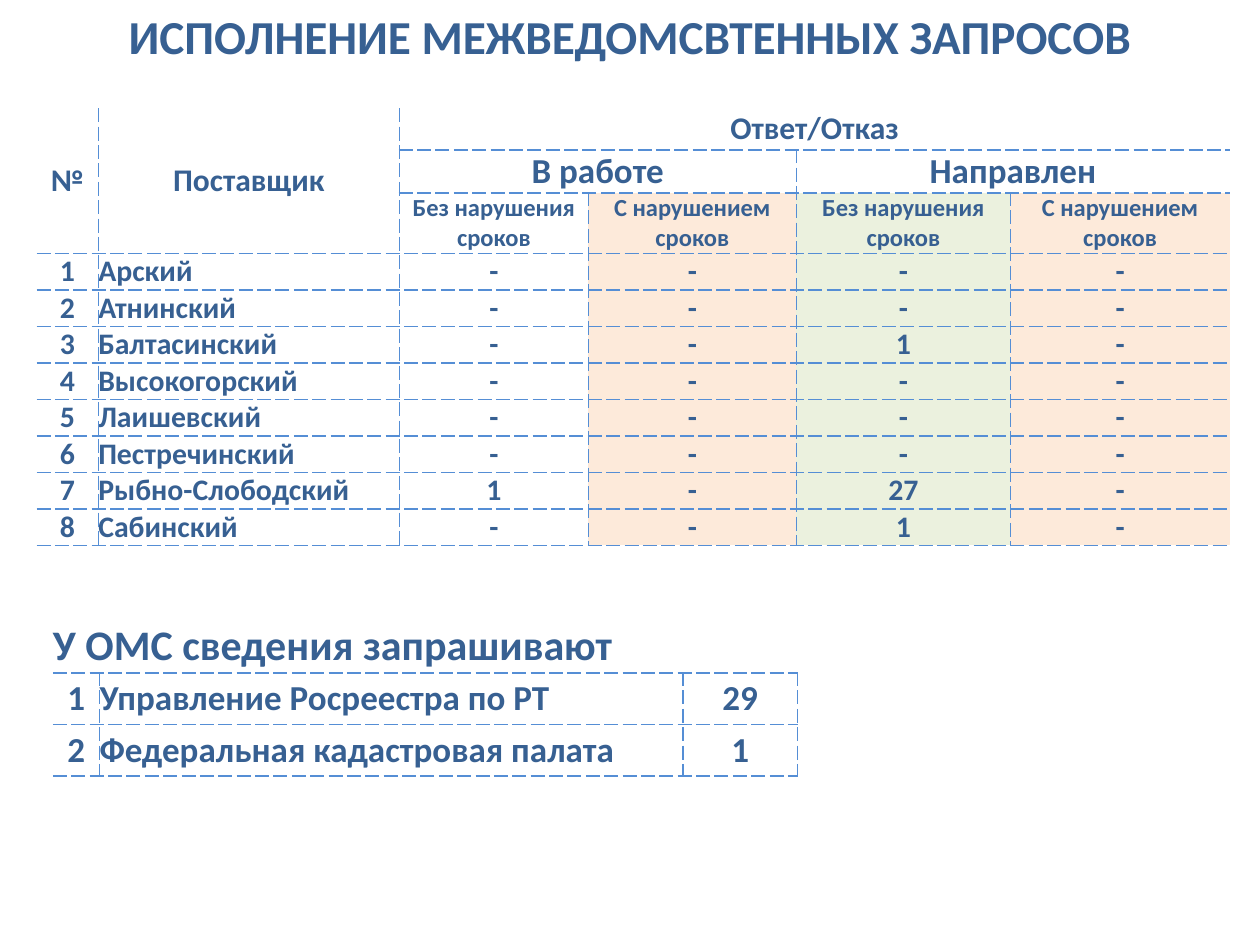
from lxml.etree import SubElement
from pptx import Presentation
from pptx.dml.color import RGBColor
from pptx.enum.text import MSO_ANCHOR as Anchor, PP_ALIGN as Align
from pptx.oxml.ns import qn
from pptx.util import Inches, Pt

TEXT, RULE = "376092", "558ED5"
PEACH, GREEN = "FDEADA", "EBF1DE"
TINTS = {3: PEACH, 4: GREEN, 5: PEACH}
NO_MARGINS = {f"margin_{side}": 0 for side in ("left", "top", "right", "bottom")}
SUPPLIERS = [
    ("Арский", "-", "-", "-", "-"),
    ("Атнинский", "-", "-", "-", "-"),
    ("Балтасинский", "-", "-", "1", "-"),
    ("Высокогорский", "-", "-", "-", "-"),
    ("Лаишевский", "-", "-", "-", "-"),
    ("Пестречинский", "-", "-", "-", "-"),
    ("Рыбно-Слободский", "1", "-", "27", "-"),
    ("Сабинский", "-", "-", "1", "-"),
]
REQUESTERS = [("Управление Росреестра по РТ", "29"), ("Федеральная кадастровая палата", "1")]


def color(value):
    """Turn a hex string into a colour."""
    return RGBColor.from_string(value)


def set_format(target, values):
    """Set each named attribute on the target."""
    for name, value in values.items():
        setattr(target, name, value)


def write(holder, text, size, align):
    """Write one bold paragraph into a cell or a text frame."""
    holder.text = text
    para = getattr(holder, "text_frame", holder).paragraphs[0]
    para.alignment = align
    set_format(para.font, {"name": "Calibri", "size": Pt(size), "bold": True})
    para.font.color.rgb = color(TEXT)


def draw_borders(cell, sides):
    """Draw dashed rules on the chosen sides and clear the others."""
    properties = cell._tc.get_or_add_tcPr()
    for side in "LRTB":
        line = SubElement(properties, qn(f"a:ln{side}"), w=str(Pt(1)))
        if side in sides:
            fill = SubElement(line, qn("a:solidFill"))
            SubElement(fill, qn("a:srgbClr"), val=RULE)
            SubElement(line, qn("a:prstDash"), val="sysDash")
        else:
            SubElement(line, qn("a:noFill"))


def add_grid(page, box, widths, heights, spans):
    """Add a plain table with merged spans of (row, column, rows, columns)."""
    frame = page.shapes.add_table(len(heights), len(widths), *map(Inches, box))
    table = frame.table
    set_format(table, {"first_row": False, "horz_banding": False})
    for column, width in zip(table.columns, widths):
        column.width = Inches(width)
    for row, height in zip(table.rows, heights):
        row.height = Inches(height)
    for top, left, rows, columns in spans:
        table.cell(top, left).merge(table.cell(top + rows - 1, left + columns - 1))
    return table


def fill_grid(table, rows, size_of, left_aligned, tints, closed_right=False):
    """Write and format every visible cell of a table."""
    last = len(table.columns) - 1
    for r, values in enumerate(rows):
        for c, text in enumerate(values):
            cell = table.cell(r, c)
            if cell.is_spanned:
                continue
            end = c + (cell.span_width if cell.is_merge_origin else 1) - 1
            shown = {"L": c > 0, "R": end < last or (closed_right and r > 0), "T": r > 0, "B": True}
            write(cell, text, size_of(r, c), Align.LEFT if left_aligned(r, c) else Align.CENTER)
            set_format(cell, {"vertical_anchor": Anchor.MIDDLE, **NO_MARGINS})
            draw_borders(cell, [side for side, on in shown.items() if on])
            if r >= 2 and c in tints:
                cell.fill.solid()
                cell.fill.fore_color.rgb = color(tints[c])
            else:
                cell.fill.background()


def add_title(page, box):
    """Place the slide title."""
    title = page.shapes.title
    set_format(title, dict(zip(("left", "top", "width", "height"), map(Inches, box))))
    set_format(title.text_frame, {"word_wrap": True, "vertical_anchor": Anchor.MIDDLE})
    write(title.text_frame, "ИСПОЛНЕНИЕ МЕЖВЕДОМСВТЕННЫХ ЗАПРОСОВ", 27, Align.CENTER)


def add_suppliers(page, box):
    """Add the table of answers and refusals by supplier."""
    rows = [
        ("№", "Поставщик", "Ответ/Отказ", "", "", ""),
        ("", "", "В работе", "", "Направлен", ""),
        ("", "") + ("Без нарушения сроков", "С нарушением сроков") * 2,
    ] + [(str(number), *values) for number, values in enumerate(SUPPLIERS, 1)]
    heights = [0.33, 0.34, 0.48] + [0.29] * len(SUPPLIERS)
    spans = [(0, 0, 3, 1), (0, 1, 3, 1), (0, 2, 1, 4), (1, 2, 1, 2), (1, 4, 1, 2)]
    table = add_grid(page, box, [0.49, 2.39, 1.5, 1.65, 1.7, 1.74], heights, spans)
    header_sizes = (18, 20, 14)
    fill_grid(table, rows, lambda r, c: header_sizes[r] if r < 3 else 17,
              lambda r, c: r > 2 and c == 1, TINTS)


def add_requesters(page, box):
    """Add the table of bodies that request information."""
    rows = [("У ОМС сведения запрашивают", "", "")]
    rows += [(str(number), *values) for number, values in enumerate(REQUESTERS, 1)]
    table = add_grid(page, box, [0.37, 4.63, 0.91], [0.42, 0.41, 0.41], [(0, 0, 1, 3)])
    fill_grid(table, rows, lambda r, c: 20 if r else 24,
              lambda r, c: r == 0 or c == 1, {}, closed_right=True)


def main():
    """Build and save the deck."""
    deck = Presentation()
    set_format(deck, {"slide_width": Inches(10), "slide_height": Inches(7.5)})
    page = deck.slides.add_slide(deck.slide_layouts[5])
    add_suppliers(page, (0.29, 0.86, 9.47, 3.47))
    add_requesters(page, (0.42, 4.92, 5.91, 1.24))
    add_title(page, (0, 0, 10, 0.56))
    deck.save("out.pptx")


if __name__ == "__main__":
    main()
